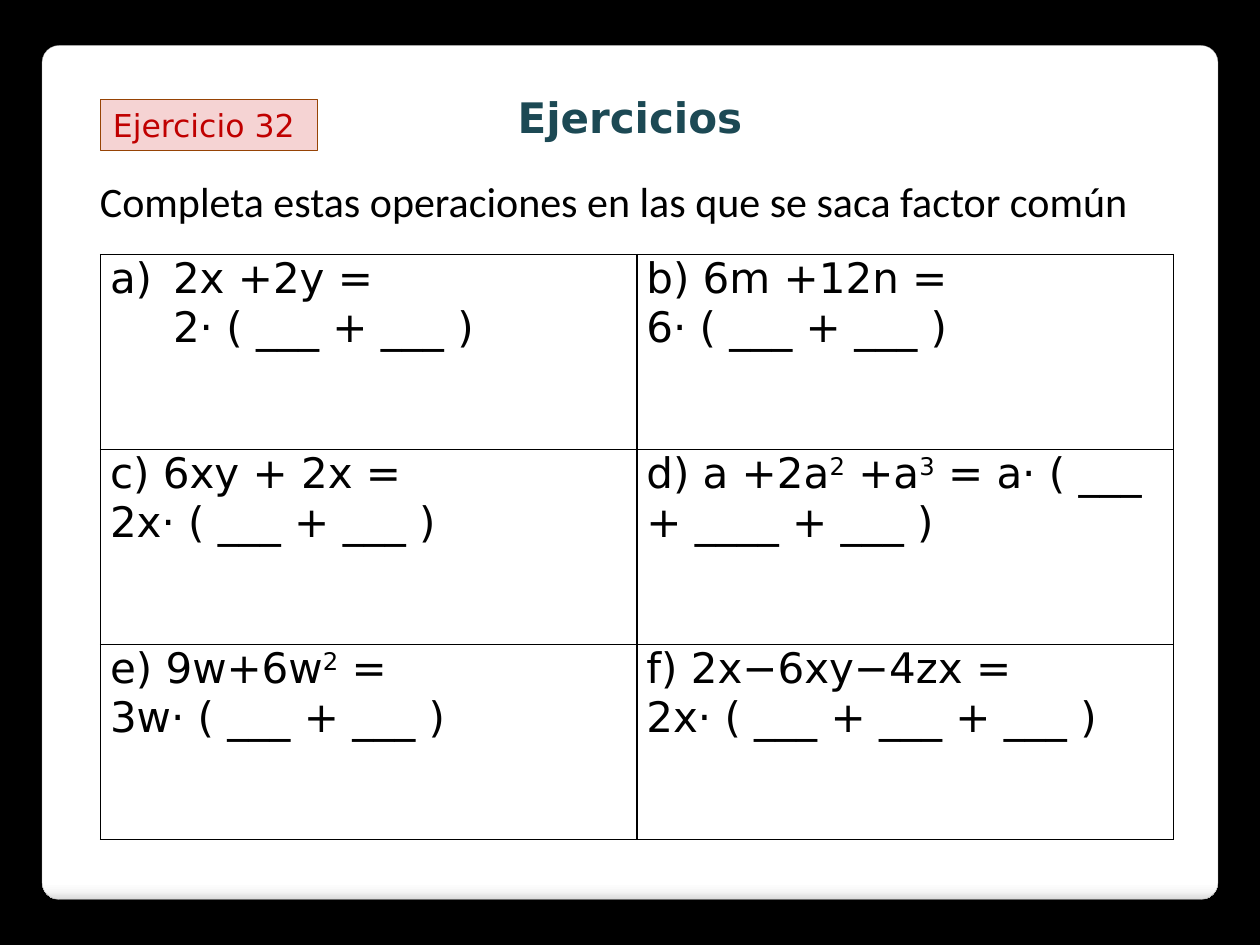
from dataclasses import dataclass

from lxml import etree
from pptx import Presentation
from pptx.dml import color
from pptx.enum import shapes, text
from pptx.oxml import ns
from pptx.util import Pt


@dataclass(frozen=True)
class Theme:
    backdrop: str = "000000"
    ink: str = "000000"
    title: str = "1C4954"
    badge_text: str = "C00000"
    badge_fill: str = "F5D3D3"
    badge_line: str = "964305"
    card_line: str = "A4A4A4"
    card_stops: tuple = ((0, "FFFFFF"), (98, "FFFFFF"), (99, "F7F7F7"), (100, "DADADA"))
    body_size: int = 24
    badge_size: int = 18
    math_font: str = "DejaVu Sans"
    prompt_font: str = "Calibri"


THEME = Theme()
EXERCISES = (
    ("2x +2y = \n2⋅ ( ___ + ___ )", "b) 6m +12n = \n6⋅ ( ___ + ___ )"),
    ("c) 6xy + 2x = \n2x⋅ ( ___ + ___ )", "d) a +2a^2 +a^3 = a⋅ ( ___ + ____ + ___ )"),
    ("e) 9w+6w^2 = \n3w⋅ ( ___ + ___ )", "f) 2x−6xy−4zx = \n2x⋅ ( ___ + ___ + ___ )"),
)


def rgb(value):
    return color.RGBColor.from_string(value)


def add_child(parent, tag, **attributes):
    return etree.SubElement(parent, ns.qn(tag), attributes)


def style_run(run, size, font, ink, bold=False):
    run.font.size = Pt(size)
    run.font.name = font
    run.font.color.rgb = rgb(ink)
    run.font.bold = bold


def add_panel(slide, preset, box, line, width):
    panel = slide.shapes.add_shape(preset, *map(Pt, box))
    panel.shadow.inherit = False
    panel.line.color.rgb = rgb(line)
    panel.line.width = Pt(width)
    return panel


def add_card(slide, box):
    card = add_panel(slide, shapes.MSO_SHAPE.ROUNDED_RECTANGLE, box, THEME.card_line, 0.16)
    card.adjustments[0] = 0.02
    card.fill.gradient()
    gradient = card._element.spPr.find(ns.qn("a:gradFill"))
    for child in list(gradient):
        gradient.remove(child)
    stops = add_child(gradient, "a:gsLst")
    for position, shade in THEME.card_stops:
        stop = add_child(stops, "a:gs", pos=str(position * 1000))
        add_child(stop, "a:srgbClr", val=shade)
    add_child(gradient, "a:lin", ang="5400000", scaled="0")


def add_badge(slide, box, label):
    badge = add_panel(slide, shapes.MSO_SHAPE.RECTANGLE, box, THEME.badge_line, 0.75)
    badge.fill.solid()
    badge.fill.fore_color.rgb = rgb(THEME.badge_fill)
    badge.text_frame.text = label
    badge.text_frame.vertical_anchor = text.MSO_ANCHOR.TOP
    paragraph = badge.text_frame.paragraphs[0]
    paragraph.alignment = text.PP_ALIGN.LEFT
    style_run(paragraph.runs[0], THEME.badge_size, THEME.math_font, THEME.badge_text)


def add_line_of_text(slide, box, wording, font, ink, align, bold=False):
    frame = slide.shapes.add_textbox(*map(Pt, box)).text_frame
    frame.word_wrap = True
    frame.text = wording
    paragraph = frame.paragraphs[0]
    paragraph.alignment = align
    style_run(paragraph.runs[0], THEME.body_size, font, ink, bold)


def write_formula(paragraph, formula):
    for row, line in enumerate(formula.split("\n")):
        if row:
            paragraph.add_line_break()
        base, *powers = line.split("^")
        pieces = [(base, False)]
        for power in powers:
            pieces += [(power[0], True), (power[1:], False)]
        for wording, raised in pieces:
            run = paragraph.add_run()
            run.text = wording
            style_run(run, THEME.body_size, THEME.math_font, THEME.ink)
            if raised:
                run.font._element.set("baseline", "30000")


def number_paragraph(paragraph):
    properties = paragraph._p.get_or_add_pPr()
    properties.set("marL", str(Pt(36)))
    properties.set("indent", str(-Pt(36)))
    add_child(properties, "a:buFont", typeface="+mj-lt")
    add_child(properties, "a:buAutoNum", type="alphaLcParenR")


def border_cell(cell):
    properties = cell._tc.get_or_add_tcPr()
    for index, side in enumerate(("a:lnL", "a:lnR", "a:lnT", "a:lnB")):
        edge = etree.Element(ns.qn(side), w=str(Pt(1)))
        fill = add_child(edge, "a:solidFill")
        add_child(fill, "a:srgbClr", val=THEME.ink)
        properties.insert(index, edge)


def add_exercises(slide, box):
    rows, columns = len(EXERCISES), len(EXERCISES[0])
    left, top, width, height = box
    table = slide.shapes.add_table(rows, columns, *map(Pt, box)).table
    table.first_row = table.horz_banding = False
    for column in table.columns:
        column.width = Pt(width / columns)
    for row, formulas in zip(table.rows, EXERCISES):
        row.height = Pt(height / rows)
        for cell, formula in zip(row.cells, formulas):
            cell.fill.background()
            cell.margin_left = cell.margin_right = Pt(5.4)
            cell.margin_top = cell.margin_bottom = 0
            border_cell(cell)
            write_formula(cell.text_frame.paragraphs[0], formula)
    number_paragraph(table.cell(0, 0).text_frame.paragraphs[0])


def build_exercise_slide(presentation, box):
    slide = presentation.slides.add_slide(presentation.slide_layouts[6])
    slide.background.fill.solid()
    slide.background.fill.fore_color.rgb = rgb(THEME.backdrop)
    left, top, width, height = box
    add_card(slide, box)
    add_line_of_text(slide, (left + 4, top + 22.5, width - 8, 36), "Ejercicios",
                     THEME.math_font, THEME.title, text.PP_ALIGN.CENTER, bold=True)
    add_badge(slide, (left + 33.5, top + 31, 124, 29), "Ejercicio 32")
    add_line_of_text(slide, (left + 26, top + 70.5, 620, 36),
                     "Completa estas operaciones en las que se saca factor común",
                     THEME.prompt_font, THEME.ink, text.PP_ALIGN.LEFT)
    add_exercises(slide, (left + 33.5, top + 119.5, 613, 334.2))


def main():
    presentation = Presentation()
    presentation.slide_width, presentation.slide_height = Pt(720), Pt(540)
    build_exercise_slide(presentation, (24, 26, 672, 488))
    presentation.save("out.pptx")


if __name__ == "__main__":
    main()
